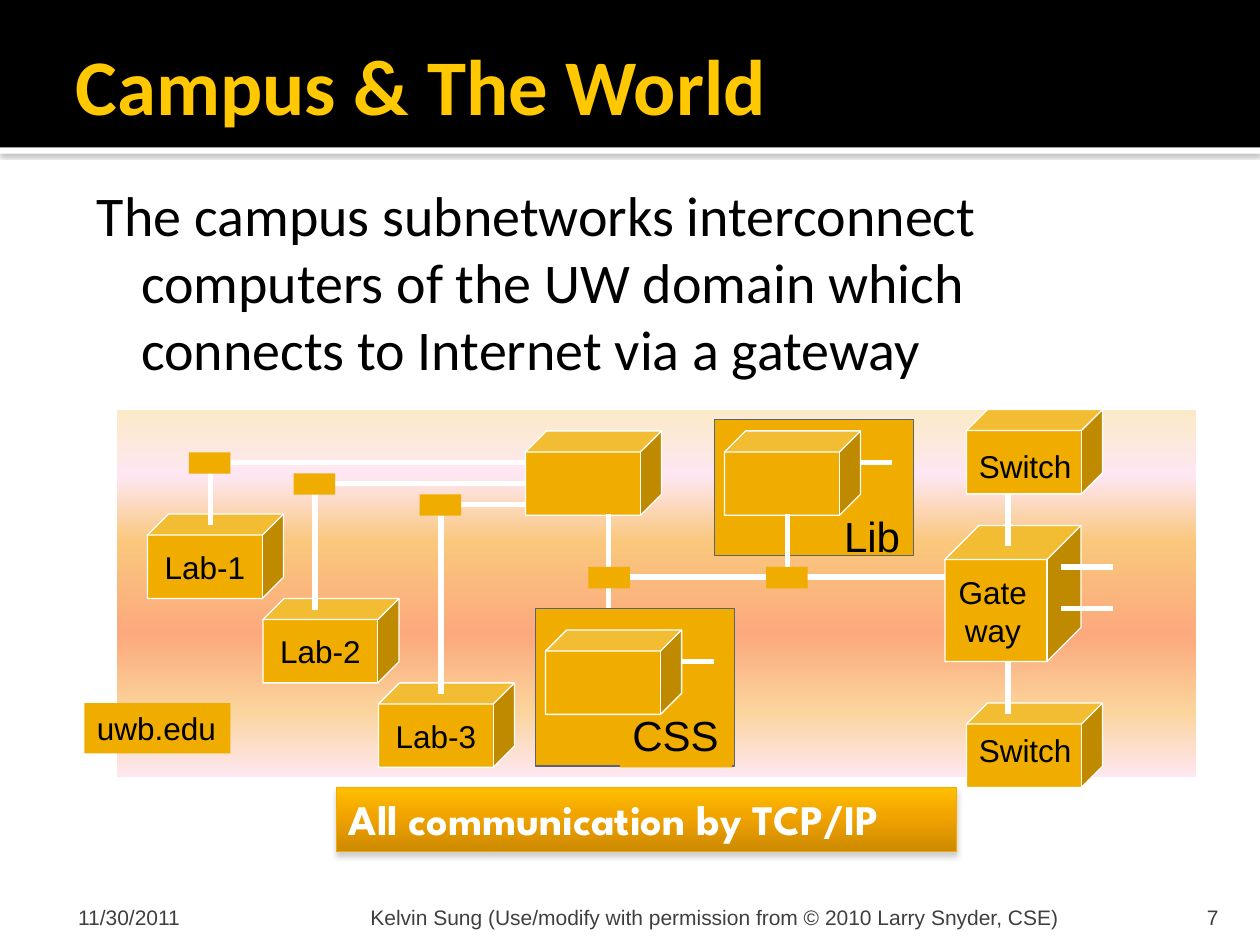
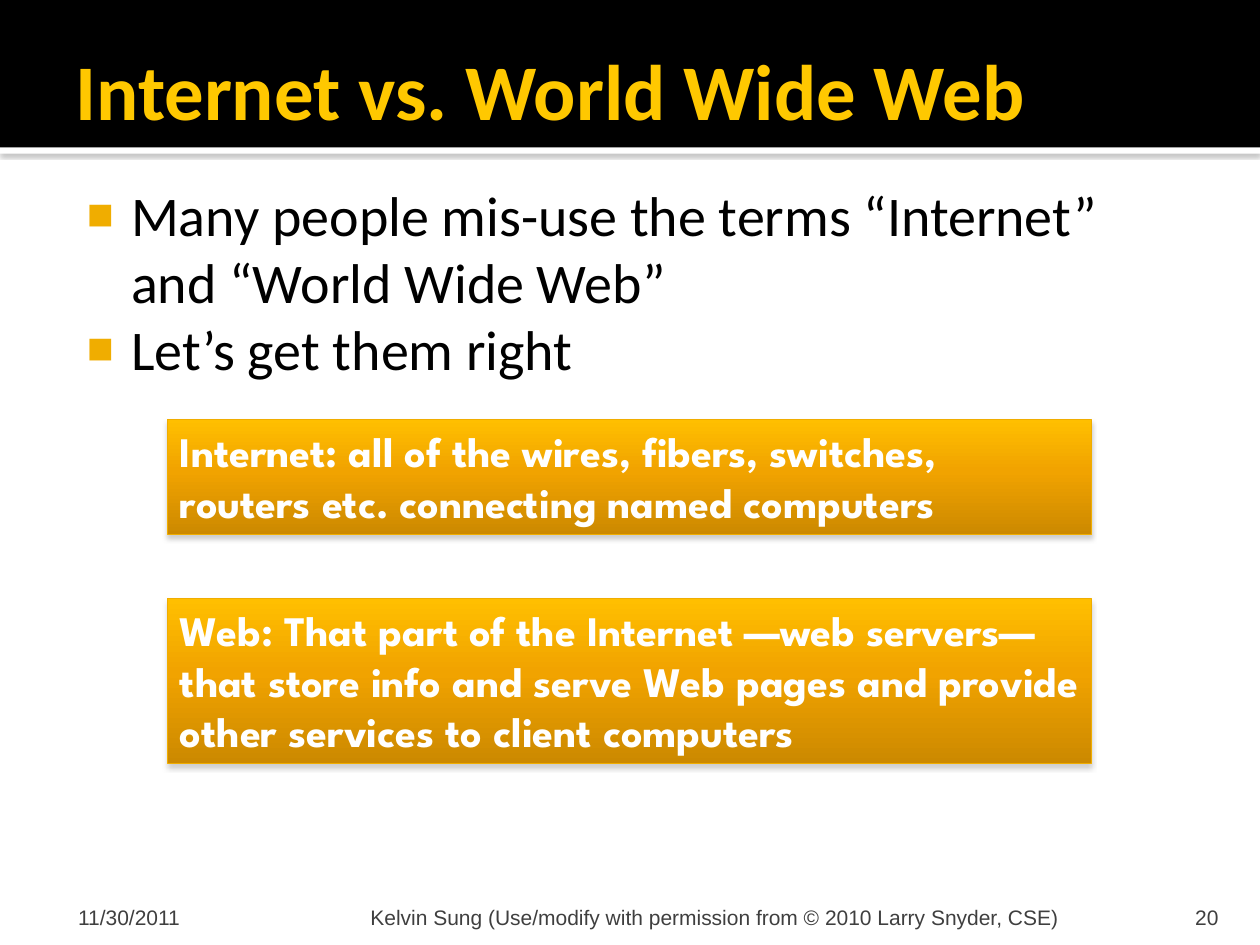
from lxml.etree import SubElement
from pptx import Presentation
from pptx.dml.color import RGBColor
from pptx.enum.shapes import MSO_CONNECTOR, MSO_SHAPE
from pptx.enum.text import MSO_ANCHOR, MSO_AUTO_SIZE, PP_ALIGN
from pptx.oxml.ns import qn
from pptx.util import Inches, Pt

# Colours shared by the slides
BLACK = RGBColor(0x00, 0x00, 0x00)
WHITE = RGBColor(0xFF, 0xFF, 0xFF)
YELLOW = RGBColor(0xFF, 0xC8, 0x00)
GOLD = RGBColor(0xF0, 0xAD, 0x00)
SLATE = RGBColor(0x5A, 0x63, 0x78)
GREY = RGBColor(0x3F, 0x3F, 0x3F)
SHADE = RGBColor(0x80, 0x80, 0x80)
PINK = RGBColor(0xFE, 0xE7, 0xF2)

# Gradient stops: percent and colour
AMBER = [(0, RGBColor(0xFF, 0xBF, 0x00)), (45, RGBColor(0xF1, 0xA3, 0x00)),
         (100, RGBColor(0xCC, 0x89, 0x00))]
DAWN = [(0, RGBColor(0xFB, 0xEA, 0xC7)), (18, PINK),
        (36, RGBColor(0xFA, 0xC7, 0x7D)), (61, RGBColor(0xFB, 0xA9, 0x7D)),
        (82, RGBColor(0xFB, 0xD4, 0x9C)), (100, PINK)]

DATE = "11/30/2011"
CREDIT = "Kelvin Sung (Use/modify with permission from © 2010 Larry Snyder, CSE)"
INSETS = (0.1, 0.05, 0.1, 0.05)


# Text and effects
def write(shape, text, size, color=BLACK, font="Arial", bold=False,
          align=PP_ALIGN.LEFT, anchor=MSO_ANCHOR.TOP, insets=INSETS, wrap=True):
    frame = shape.text_frame
    frame.text = text
    frame.auto_size = MSO_AUTO_SIZE.NONE
    frame.word_wrap = wrap
    frame.vertical_anchor = anchor
    (frame.margin_left, frame.margin_top,
     frame.margin_right, frame.margin_bottom) = map(Inches, insets)
    for para in frame.paragraphs:
        para.alignment = align
        para.space_before = Pt(0)
        for run in para.runs:
            run.font.name = font
            run.font.size = Pt(size)
            run.font.bold = bold
            run.font.color.rgb = color


def add_tint(parent, color):
    return SubElement(parent, qn("a:srgbClr"), val=str(color))


def blend(shape, stops):
    shape.fill.gradient()
    shape.fill.gradient_angle = 270
    holder = shape.element.spPr.find(".//" + qn("a:gsLst"))
    holder.clear()
    for percent, color in stops:
        add_tint(SubElement(holder, qn("a:gs"), pos=str(percent * 1000)), color)


def add_glow(shape, alpha, blur, drop):
    effects = shape.element.spPr.find(qn("a:effectLst"))
    shadow = SubElement(effects, qn("a:outerShdw"), blurRad=str(Pt(blur)),
                        dist=str(Pt(drop)), dir="5400000", rotWithShape="0")
    SubElement(add_tint(shadow, SHADE), qn("a:alpha"), val=str(alpha * 1000))


def set_bullet(para, mark):
    props = para._p.get_or_add_pPr()
    props.set("marL", str(Inches(0.48)))
    props.set("indent", str(Inches(-0.35)))
    if mark:
        add_tint(SubElement(props, qn("a:buClr")), GOLD)
        SubElement(props, qn("a:buSzPct"), val="80000")
        SubElement(props, qn("a:buFont"), typeface="Arial")
        SubElement(props, qn("a:buChar"), char=mark)
    else:
        SubElement(props, qn("a:buNone"))


# Shapes
def place(shape, box):
    shape.left, shape.top, shape.width, shape.height = map(Inches, box)


def add_block(slide, box, fill=GOLD, line=None, kind=MSO_SHAPE.RECTANGLE, weight=0.75):
    shape = slide.shapes.add_shape(kind, *map(Inches, box))
    shape.shadow.inherit = False
    if isinstance(fill, list):
        blend(shape, fill)
    else:
        shape.fill.solid()
        shape.fill.fore_color.rgb = fill
    if line is None:
        shape.line.fill.background()
    else:
        shape.line.color.rgb = line
        shape.line.width = Pt(weight)
    return shape


def add_cube(slide, left, top, height=0.67, label=""):
    cube = add_block(slide, (left, top, 1.08, height), line=WHITE, kind=MSO_SHAPE.CUBE)
    if label:
        write(cube, label, 18, align=PP_ALIGN.CENTER, anchor=MSO_ANCHOR.MIDDLE, wrap=False)


def add_hub(slide, left, top):
    add_block(slide, (left, top, 0.33, 0.17))


def add_wire(slide, x1, y1, x2, y2):
    wire = slide.shapes.add_connector(
        MSO_CONNECTOR.STRAIGHT, *map(Inches, (x1, y1, x2, y2)))
    wire.line.color.rgb = WHITE
    wire.line.width = Pt(3)
    SubElement(wire.element.spPr, qn("a:effectLst"))


def add_label(slide, box, text, size=18, **style):
    write(slide.shapes.add_textbox(*map(Inches, box)), text, size, **style)


def add_banner(slide, box, text):
    banner = add_block(slide, box, AMBER, GOLD, weight=0.5)
    add_glow(banner, 38, 3.1, 2)
    write(banner, text, 24, WHITE, "League Spartan", True)


# Parts that both slides share
def add_bands(slide):
    strip = add_block(slide, (0, 1.17, 10, 0.05), WHITE)
    add_glow(strip, 60, 2.5, 0.8)
    band = add_block(slide, (0, 0, 10, 1.17), BLACK)
    # Move them to the layout, behind its placeholders
    for spot, shape in enumerate((strip, band)):
        shape.element.nvSpPr.cNvPr.set("id", str(101 + spot))
        slide.slide_layout.shapes.element.insert(2 + spot, shape.element)


def add_page(deck, title, height, lines, box, mark=None):
    slide = deck.slides.add_slide(deck.slide_layouts[1])
    head, body = slide.placeholders
    place(head, (0.5, 0.17, 9, height))
    write(head, title, 45, YELLOW, "Calibri", True,
          anchor=MSO_ANCHOR.MIDDLE, insets=(0.1, 0.05, 0.05, 0.05))
    place(body, box)
    write(body, "\n".join(lines), 32, font="Calibri", insets=(0.06, 0.1, 0.1, 0.05))
    for para in body.text_frame.paragraphs:
        set_bullet(para, mark)
    return slide


def add_footer(slide, number):
    for left, width, text, align, insets in (
            (0.5, 2.33, DATE, PP_ALIGN.LEFT, (0.12, 0.05, 0.05, 0)),
            (8.97, 0.8, number, PP_ALIGN.RIGHT, (0.1, 0.05, 0.1, 0)),
            (2.89, 6.02, CREDIT, PP_ALIGN.LEFT, (0.05, 0.05, 0.05, 0))):
        add_label(slide, (left, 7.08, width, 0.3), text, 12, color=GREY,
                  align=align, anchor=MSO_ANCHOR.BOTTOM, insets=insets)


# Campus diagram
def draw_labs(slide):
    for step, hub in enumerate((1.5, 2.33, 3.33)):
        left, top = 1.17 + step * 11 / 12, 4.08 + step * 0.67
        level = 3.67 + step / 6
        add_cube(slide, left, top, label=f"Lab-{step + 1}")
        add_wire(slide, hub + 0.17, top + 0.09, hub + 0.17, level + 0.08)
        add_wire(slide, hub + 0.33, level, 4.83, level)
        add_hub(slide, hub, level - 0.08)
    add_cube(slide, 4.17, 3.42)


def draw_sites(slide):
    add_wire(slide, 4.83, 4.08, 4.83, 5.08)
    add_block(slide, (4.25, 4.83, 1.58, 1.25), line=SLATE)
    css = add_block(slide, (4.92, 5.58, 0.89, 0.51))
    write(css, "CSS", 24, wrap=False)
    add_wire(slide, 5.33, 5.25, 5.67, 5.25)
    add_cube(slide, 4.33, 5)

    add_block(slide, (5.67, 3.33, 1.58, 1.08), line=SLATE)
    add_label(slide, (6.6, 4, 0.65, 0.51), "Lib", 24, wrap=False)
    add_wire(slide, 6.75, 3.67, 7.08, 3.67)
    add_wire(slide, 4.83, 4.58, 8.17, 4.58)
    add_cube(slide, 5.75, 3.42)
    add_wire(slide, 6.25, 4.5, 6.25, 4.08)
    for left in (4.67, 6.08):
        add_hub(slide, left, 4.5)


def draw_gateway(slide):
    add_cube(slide, 7.5, 4.17, 1.08)
    add_label(slide, (7.42, 4.5, 0.92, 0.7), "Gate\nway", align=PP_ALIGN.CENTER)
    for top, text_top, start, end in ((3.25, 3.5, 3.92, 4.33), (5.58, 5.75, 5.25, 5.67)):
        add_cube(slide, 7.67, top)
        add_wire(slide, 8, start, 8, end)
        add_label(slide, (7.67, text_top, 0.94, 0.4), "Switch", wrap=False)
    for level in (4.5, 4.83):
        add_wire(slide, 8.42, level, 8.83, level)


def build_campus(deck):
    slide = add_page(
        deck, "Campus & The World", 1,
        ["The campus subnetworks interconnect computers of the UW domain "
         "which connects to Internet via a gateway"],
        (0.58, 1.33, 8.67, 4.5))
    add_bands(slide)
    add_banner(slide, (2.67, 6.25, 4.92, 0.51), "All communication by TCP/IP")
    add_block(slide, (0.92, 3.25, 8.58, 2.92), DAWN, WHITE)
    draw_labs(slide)
    draw_sites(slide)
    draw_gateway(slide)
    domain = add_block(slide, (0.67, 5.58, 1.16, 0.4))
    write(domain, "uwb.edu", 18, wrap=False)
    add_footer(slide, "7")


def build_terms(deck):
    slide = add_page(
        deck, "Internet vs. World Wide Web", 1.08,
        ["Many people mis-use the terms “Internet” and “World Wide Web”",
         "Let’s get them right"],
        (0.5, 1.33, 9, 5.67), "■")
    add_banner(slide, (1.33, 3.33, 7.33, 0.91),
               "Internet: all of the wires, fibers, switches, routers etc. "
               "connecting named computers")
    add_banner(slide, (1.33, 4.75, 7.33, 1.31),
               "Web: That part of the Internet —web servers—that store info and "
               "serve Web pages and provide other services to client computers")
    add_footer(slide, "20")


def main():
    deck = Presentation()
    deck.slide_width, deck.slide_height = Inches(10), Inches(7.5)
    build_campus(deck)
    build_terms(deck)
    deck.save("out.pptx")


if __name__ == "__main__":
    main()
